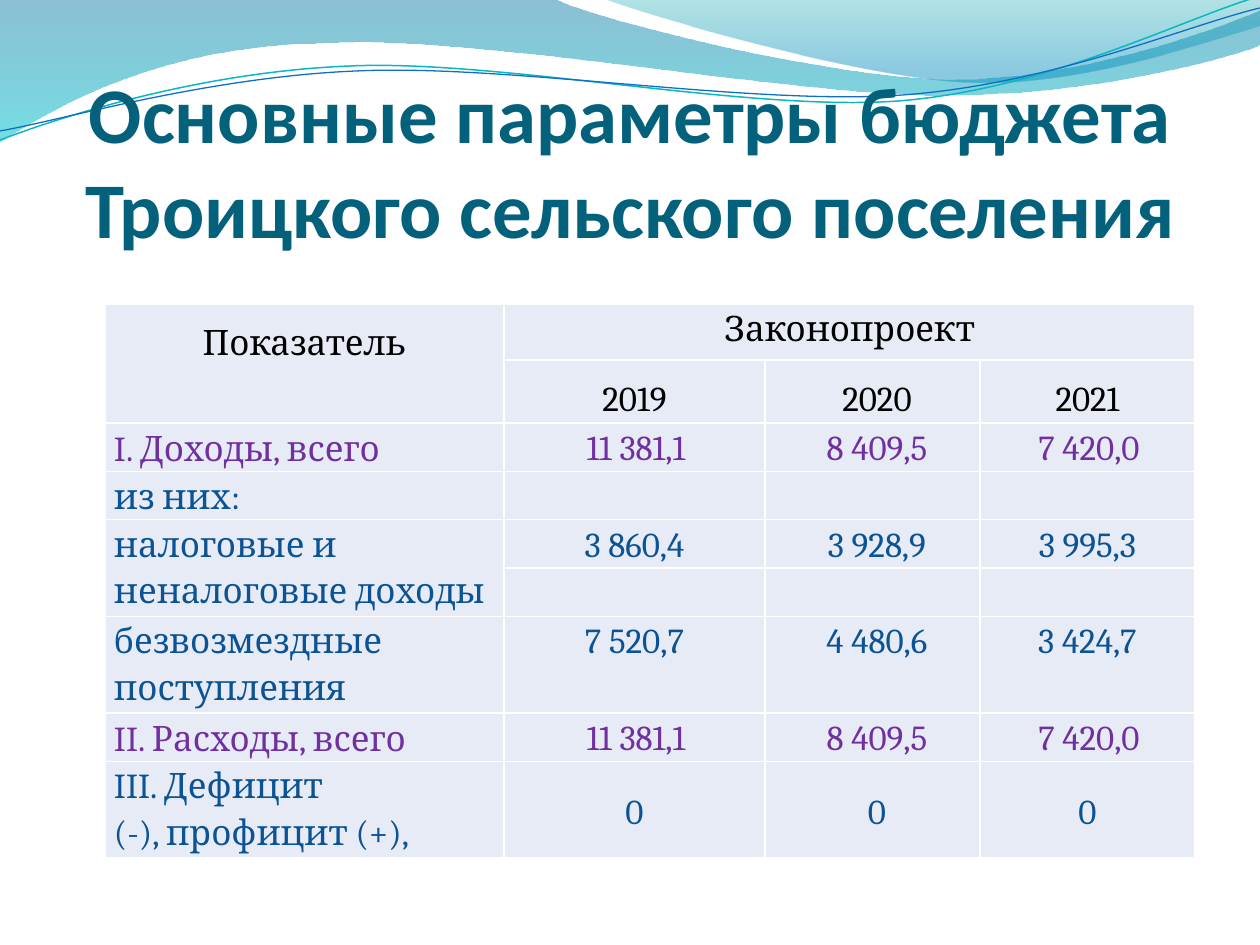
"""Builds the slide with the main budget parameters of the settlement."""
from dataclasses import dataclass, field

from pptx import Presentation
from pptx import util as u
from pptx.dml import color
from pptx.enum import text
from pptx.oxml import ns, parse_xml

SCALE = 914400 / 126
COLORS = {
    "title": "04617B", "header": "000000", "total": "7030A0", "detail": "0B5394",
    "cell": "E7EBF5", "teal": "0AB8BF", "blue": "0F6FC6",
    "deep": "0074A1", "cyan": "00C6CF", "sea": "00A1A9", "sky": "008BBF",
}
CENTER, LEFT = text.PP_ALIGN.CENTER, text.PP_ALIGN.LEFT
TOP, MIDDLE, BOTTOM = (text.MSO_ANCHOR.TOP, text.MSO_ANCHOR.MIDDLE, text.MSO_ANCHOR.BOTTOM)


@dataclass
class Stop:
    color: str
    position: float
    alpha: int


@dataclass
class Wave:
    start: tuple
    segments: list
    stops: list = field(default_factory=list)
    line: str = ""
    weight: float = 0


@dataclass
class Row:
    label: str
    values: tuple
    color: str
    height: int
    anchor: int = TOP
    value_anchor: int = TOP
    indents: tuple = (-9, 9, -9)


WAVES = [
    Wave((0, 0), [(554, -1), (600, 21, 837, 79, 955, 79), (1075, 79, 1207, 33, 1260, 11),
                  (1261, 45), (1239, 55, 1096, 96, 940, 95), (783, 95, 481, 35, 324, 43),
                  (163, 45, 58, 105, -1, 142)],
         [Stop("deep", 0, 45), Stop("cyan", 1, 55)]),
    Wave((604, -1), [(641, 14, 859, 78, 969, 82), (1079, 87, 1211, 40, 1260, 26), (1260, 0)],
         [Stop("sea", 0, 30), Stop("sky", 0.8, 45)]),
    Wave((0, 140), [(60, 117, 199, 72, 349, 66), (498, 59, 747, 112, 898, 101),
                    (1049, 89, 1182, 19, 1257, -3)], line="teal", weight=0.85),
    Wave((0, 131), [(59, 121, 207, 77, 357, 71), (508, 64, 752, 106, 903, 95),
                    (1053, 84, 1185, 26, 1260, 8)], line="blue", weight=0.75),
]
COLUMNS = [399, 261, 215, 215]
HEADER_HEIGHTS = [56, 61]
YEARS = ("2019", "2020", "2021")
TOTALS = ("11 381,1", "8 409,5", "7 420,0")
ROWS = [
    Row("I. Доходы, всего", TOTALS, "total", 46, MIDDLE, indents=(3, 9, 3)),
    Row("из них:", ("",) * 3, "detail", 46, MIDDLE),
    Row("налоговые и неналоговые доходы", ("3 860,4", "3 928,9", "3 995,3"), "detail", 46),
    Row("", ("",) * 3, "detail", 46),
    Row("безвозмездные поступления", ("7 520,7", "4 480,6", "3 424,7"), "detail", 92),
    Row("II. Расходы, всего", TOTALS, "total", 46, MIDDLE, indents=(3, 9, 3)),
    Row("III. Дефицит\n(-), профицит (+),", ("0",) * 3, "detail", 92,
        value_anchor=MIDDLE, indents=(0, 9, 0)),
]


def px(value: float) -> int:
    """Turns pixels into EMU."""
    return round(value * SCALE)


def rgb(name: str) -> color.RGBColor:
    """Looks up a named colour."""
    return color.RGBColor.from_string(COLORS[name])


def apply(target, values: dict) -> None:
    """Sets attributes from a dict of format values."""
    for name, value in values.items():
        setattr(target, name, value)


def bend(shape, segments: list) -> None:
    """Joins each three line points of a curved segment into one cubic curve."""
    nodes = iter(list(shape.element.iter(ns.qn("a:lnTo"))))
    for segment in segments:
        first = next(nodes)
        if len(segment) == 6:
            first.tag = ns.qn("a:cubicBezTo")
            for node in (next(nodes), next(nodes)):
                first.append(node[0])
                node.getparent().remove(node)


def draw_wave(slide, wave: Wave) -> None:
    """Draws one wave as a gradient area or a thin line."""
    points = [(px(segment[i]), px(segment[i + 1]))
              for segment in wave.segments for i in range(0, len(segment), 2)]
    builder = slide.shapes.build_freeform(*map(px, wave.start), scale=1.0)
    builder.add_line_segments(points, close=bool(wave.stops))
    shape = builder.convert_to_shape()
    bend(shape, wave.segments)
    shape.shadow.inherit = False
    if not wave.stops:
        shape.fill.background()
        shape.line.color.rgb = rgb(wave.line)
        shape.line.width = u.Pt(wave.weight)
        return
    shape.line.fill.background()
    shape.fill.gradient()
    shape.fill.gradient_angle = 270
    for stop, target in zip(wave.stops, shape.fill.gradient_stops):
        target.position = stop.position
        target.color.rgb = rgb(stop.color)
    for stop, node in zip(wave.stops, shape.element.iter(ns.qn("a:srgbClr"))):
        node.append(parse_xml(f'<a:alpha {ns.nsdecls("a")} val="{stop.alpha * 1000}"/>'))


def draw_title(slide, words: str) -> None:
    """Draws the title at the bottom of its box."""
    shape = slide.shapes.add_textbox(px(63), px(97), px(1134), px(157))
    apply(shape.text_frame, {"text": words, "word_wrap": True, "vertical_anchor": BOTTOM,
                             "margin_left": 0, "margin_right": 0,
                             "margin_top": px(6), "margin_bottom": 0})
    paragraph = shape.text_frame.paragraphs[0]
    paragraph.alignment = CENTER
    apply(paragraph.runs[0].font, {"name": "Calibri", "size": u.Pt(45), "bold": True})
    paragraph.runs[0].font.color.rgb = rgb("title")


def style_cell(cell) -> None:
    """Gives a cell its fill and margins."""
    cell.fill.solid()
    cell.fill.fore_color.rgb = rgb("cell")
    apply(cell, {"margin_left": px(9), "margin_right": px(9),
                 "margin_top": 0, "margin_bottom": 0})


def write_cell(cell, words: str, ink: str, align: int = CENTER, anchor: int = TOP,
               indent: int = 0, spacing: float = 1.15) -> None:
    """Writes the paragraphs of one table cell."""
    cell.text_frame.text = words
    cell.vertical_anchor = anchor
    for paragraph in cell.text_frame.paragraphs:
        apply(paragraph, {"alignment": align, "line_spacing": spacing})
        paragraph._p.get_or_add_pPr().set("indent", str(px(indent)))
        for run in paragraph.runs:
            apply(run.font, {"name": "Cambria", "size": u.Pt(20)})
            run.font.color.rgb = rgb(ink)


def draw_table(slide) -> None:
    """Draws the budget table with its two header rows."""
    heights = HEADER_HEIGHTS + [row.height for row in ROWS]
    table = slide.shapes.add_table(len(heights), len(COLUMNS), px(105), px(304),
                                   px(sum(COLUMNS)), px(sum(heights))).table
    apply(table, {"first_row": False, "horz_banding": False})
    for column, width in zip(table.columns, COLUMNS):
        column.width = px(width)
    for row, height in zip(table.rows, heights):
        row.height = px(height)
    for cell in table.iter_cells():
        style_cell(cell)
    for first, last in (((0, 0), (1, 0)), ((0, 1), (0, 3)), ((4, 0), (5, 0))):
        table.cell(*first).merge(table.cell(*last))
    write_cell(table.cell(0, 0), "Показатель", "header", indent=-9, spacing=1.5)
    write_cell(table.cell(0, 1), "Законопроект", "header")
    for column, (year, indent) in enumerate(zip(YEARS, (0, 9, 0)), 1):
        write_cell(table.cell(1, column), year, "header", indent=indent, spacing=1.5)
    for index, row in enumerate(ROWS, len(HEADER_HEIGHTS)):
        if row.label:
            write_cell(table.cell(index, 0), row.label, row.color, LEFT, row.anchor)
        for column, (value, indent) in enumerate(zip(row.values, row.indents), 1):
            if value:
                write_cell(table.cell(index, column), value, row.color,
                           anchor=row.value_anchor, indent=indent)


def main() -> None:
    """Builds and saves the presentation."""
    presentation = Presentation()
    apply(presentation, {"slide_width": px(1260), "slide_height": px(945)})
    slide = presentation.slides.add_slide(presentation.slide_layouts[6])
    for wave in WAVES:
        draw_wave(slide, wave)
    draw_title(slide, "Основные параметры бюджета Троицкого сельского поселения")
    draw_table(slide)
    presentation.save("out.pptx")


if __name__ == "__main__":
    main()
